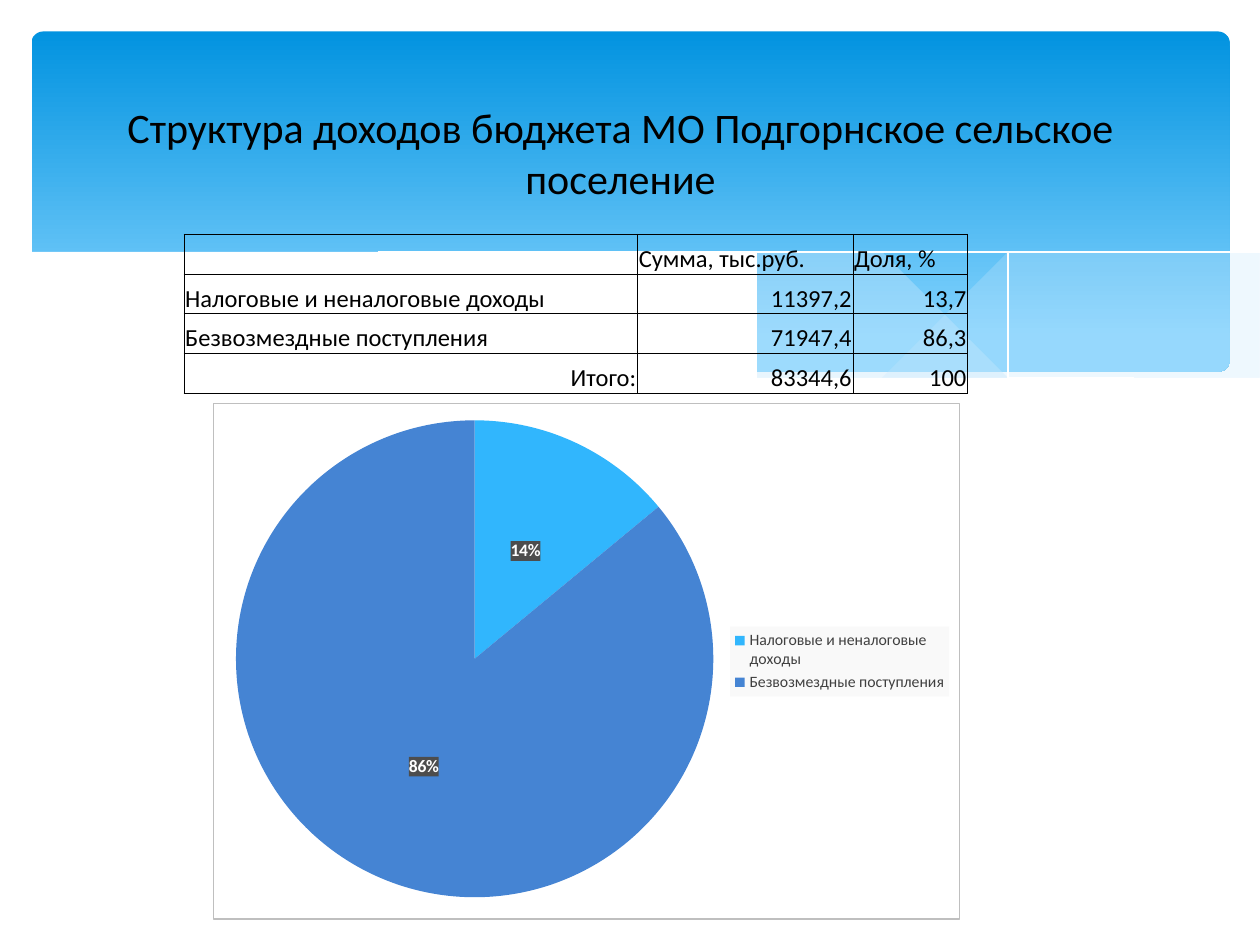
from lxml.etree import SubElement
from pptx import Presentation
from pptx.chart.data import CategoryChartData
from pptx.dml.color import RGBColor
from pptx.enum.chart import XL_CHART_TYPE as ChartType
from pptx.enum.chart import XL_LABEL_POSITION as LabelPosition
from pptx.enum.chart import XL_LEGEND_POSITION as LegendPosition
from pptx.enum.shapes import MSO_SHAPE as Shape
from pptx.enum.text import MSO_ANCHOR as Anchor
from pptx.enum.text import PP_ALIGN as Align
from pptx.oxml import parse_xml
from pptx.oxml.ns import nsdecls, qn
from pptx.util import Inches, Pt

FONT = "Calibri"
TABLE_ROWS = [
    ("", "Сумма, тыс.руб.", "Доля, %"),
    ("Налоговые и неналоговые доходы", "11397,2", "13,7"),
    ("Безвозмездные поступления", "71947,4", "86,3"),
    ("Итого:", "83344,6", "100"),
]
RIGHT_RIBBON_TOP = [(9.76, 2), (9.35, 2.07), (8.61, 2.23), (7.79, 2.42), (7.06, 2.57), (6.61, 2.65)]
RIGHT_RIBBON_BOTTOM = [(6.61, 2.65), (7.19, 2.72), (7.69, 2.77), (8.14, 2.78), (8.63, 2.75),
                       (9.05, 2.69), (9.42, 2.59), (9.76, 2.47)]
LONG_RIBBON_TOP = [(8.93, 2.73), (8.07, 2.6), (7.06, 2.4), (6.29, 2.22), (5.69, 2.08), (5.14, 1.98),
                   (4.65, 1.91), (4.2, 1.87), (3.61, 1.85), (3.13, 1.88), (2.86, 1.91)]
LONG_RIBBON_BOTTOM = [(2.86, 1.91), (3.42, 1.99), (4.04, 2.11), (4.91, 2.32), (5.66, 2.48), (6.34, 2.61),
                      (6.95, 2.7), (7.48, 2.76), (8.07, 2.78), (8.57, 2.77), (8.93, 2.73)]
FALLING_LINE = [(3.09, 1.95), (3.44, 1.9), (4.01, 1.87), (4.69, 1.89), (5.33, 1.94), (6.08, 2.04),
                (6.95, 2.19), (7.95, 2.41), (9.07, 2.72)]
RISING_LINE = [(6.13, 2.57), (6.95, 2.35), (7.76, 2.16), (8.66, 1.99), (9.24, 1.9), (9.75, 1.85)]
WAVE_TOP = [(9.77, 2.46), (9.4, 2.59), (8.99, 2.69), (8.5, 2.75), (8.09, 2.77), (7.44, 2.74),
            (6.68, 2.65), (5.79, 2.5), (5.03, 2.33), (4.47, 2.2), (3.91, 2.07), (3.4, 1.97),
            (2.92, 1.9), (2.5, 1.86), (1.93, 1.84), (1.46, 1.85), (1.06, 1.89), (0.67, 1.97),
            (0.4, 2.05), (0.23, 2.13)]
WAVE_CORNERS = [(0.23, 3.29), (9.77, 3.29)]


def color(value):
    return RGBColor.from_string(value)


def style_font(font, size, value, bold=False):
    font.name = FONT
    font.size = Pt(size)
    font.bold = bold
    font.color.rgb = color(value)


def smooth(knots, steps=6):
    padded = [knots[0], *knots, knots[-1]]
    points = [knots[0]]
    for a, b, c, d in zip(padded, padded[1:], padded[2:], padded[3:]):
        for step in range(1, steps + 1):
            t = step / steps
            points.append(tuple(
                q + t / 2 * (r - p + t * (2 * p - 5 * q + 4 * r - s + t * (3 * (q - r) + s - p)))
                for p, q, r, s in zip(a, b, c, d)))
    return points


def add_curve(page, points, close):
    builder = page.shapes.build_freeform(*points[0], scale=Inches(1))
    builder.add_line_segments(points[1:], close=close)
    curve = builder.convert_to_shape()
    curve.shadow.inherit = False
    return curve


def add_area(page, points, value, opacity=100):
    area = add_curve(page, points, True)
    area.line.fill.background()
    area.fill.solid()
    area.fill.fore_color.rgb = color(value)
    if opacity < 100:
        tint = area.fill._xPr.find(qn("a:solidFill"))[0]
        SubElement(tint, qn("a:alpha"), val=str(opacity * 1000))


def add_hairline(page, knots):
    curve = add_curve(page, smooth(knots), False)
    curve.fill.background()
    curve.line.color.rgb = color("FFFFFF")
    curve.line.width = Pt(0)


def add_banner(page):
    banner = page.shapes.add_shape(
        Shape.ROUNDED_RECTANGLE, Inches(0.25), Inches(0.25), Inches(9.51), Inches(2.7))
    banner.adjustments[0] = 0.034
    banner.shadow.inherit = False
    banner.line.fill.background()
    banner.fill.gradient()
    banner.fill.gradient_angle = 270
    for stop, position, value in zip(banner.fill.gradient_stops, (0, 0.9), ("0293E0", "83D3FE")):
        stop.position = position
        stop.color.rgb = color(value)


def add_title(page):
    box = page.shapes.add_textbox(Inches(0.75), Inches(0.76), Inches(8.35), Inches(0.91))
    box.text_frame.word_wrap = True
    para = box.text_frame.paragraphs[0]
    para.text = "Структура доходов бюджета МО Подгорнское сельское поселение"
    para.alignment = Align.CENTER
    style_font(para.runs[0].font, 24, "000000")


def add_borders(cell):
    properties = cell._tc.get_or_add_tcPr()
    for index, side in enumerate(("lnL", "lnR", "lnT", "lnB")):
        properties.insert(index, parse_xml(
            f'<a:{side} {nsdecls("a")} w="6350"><a:solidFill><a:srgbClr val="000000"/>'
            f'</a:solidFill></a:{side}>'))


def fill_cell(cell, text, alignment):
    cell.fill.background()
    cell.vertical_anchor = Anchor.BOTTOM
    cell.margin_left = cell.margin_right = cell.margin_top = Inches(0.01)
    cell.margin_bottom = 0
    cell.text_frame.text = text
    para = cell.text_frame.paragraphs[0]
    para.alignment = alignment
    style_font(para.font, 14, "000000")
    for span in para.runs:
        style_font(span.font, 14, "000000")
    add_borders(cell)


def add_income_table(page):
    frame = page.shapes.add_table(
        len(TABLE_ROWS), 3, Inches(1.46), Inches(1.86), Inches(6.22), Inches(1.26))
    table = frame.table
    table.first_row = table.horz_banding = False
    for column, width in zip(table.columns, (3.6, 1.71, 0.91)):
        column.width = Inches(width)
    last = len(TABLE_ROWS) - 1
    for row, texts in enumerate(TABLE_ROWS):
        for column, text in enumerate(texts):
            to_right = row == last or (row > 0 and column > 0)
            fill_cell(table.cell(row, column), text, Align.RIGHT if to_right else Align.LEFT)


def paint_chart_part(element, fill, border=""):
    line = f'<a:solidFill><a:srgbClr val="{border}"/></a:solidFill>' if border else "<a:noFill/>"
    element.find(qn("c:txPr")).addprevious(parse_xml(
        f'<c:spPr {nsdecls("c", "a")}><a:solidFill><a:srgbClr val="{fill}"/></a:solidFill>'
        f'<a:ln w="9525">{line}</a:ln></c:spPr>'))


def place_plot(chart, **fractions):
    area = chart._chartSpace.chart.plotArea
    for old in area.findall(qn("c:layout")):
        area.remove(old)
    values = "".join(f'<c:{key} val="{value}"/>' for key, value in fractions.items())
    area.insert(0, parse_xml(
        f'<c:layout {nsdecls("c")}><c:manualLayout><c:layoutTarget val="inner"/>'
        f'<c:xMode val="edge"/><c:yMode val="edge"/>{values}</c:manualLayout></c:layout>'))


def add_income_pie(page):
    data = CategoryChartData()
    data.categories = [row[0] for row in TABLE_ROWS[1:3]]
    data.add_series("Series 1", (14, 86))
    chart = page.shapes.add_chart(
        ChartType.PIE, Inches(1.69), Inches(3.2), Inches(5.93), Inches(4.1), data).chart
    chart.has_title = False
    style_font(chart.font, 10, "000000")
    paint_chart_part(chart._chartSpace, "FFFFFF", "BFBFBF")
    place_plot(chart, x=0.03, y=0.03, w=0.64, h=0.93)

    chart.has_legend = True
    chart.legend.position = LegendPosition.RIGHT
    chart.legend.include_in_layout = False
    style_font(chart.legend.font, 9, "404040")
    paint_chart_part(chart.legend._element, "F9F9F9")

    series = chart.plots[0].series[0]
    for index, value in enumerate(("31B6FD", "4584D3")):
        fill = series.points[index].format.fill
        fill.solid()
        fill.fore_color.rgb = color(value)
    labels = series.data_labels
    labels.show_percentage = True
    labels.show_value = False
    labels.number_format = "0%"
    labels.number_format_is_linked = False
    labels.position = LabelPosition.CENTER
    style_font(labels.font, 10, "FFFFFF", bold=True)
    paint_chart_part(labels._element, "4D4D4D")


def main():
    deck = Presentation()
    deck.slide_width, deck.slide_height = Inches(10), Inches(7.5)
    page = deck.slides.add_slide(deck.slide_layouts[6])
    add_banner(page)
    add_area(page, smooth(RIGHT_RIBBON_TOP) + smooth(RIGHT_RIBBON_BOTTOM), "C6E7FC", 29)
    add_area(page, smooth(LONG_RIBBON_TOP) + smooth(LONG_RIBBON_BOTTOM), "C6E7FC", 40)
    add_hairline(page, FALLING_LINE)
    add_hairline(page, RISING_LINE)
    add_area(page, smooth(WAVE_TOP) + WAVE_CORNERS, "FFFFFF")
    add_title(page)
    add_income_table(page)
    add_income_pie(page)
    deck.save("out.pptx")


if __name__ == "__main__":
    main()
